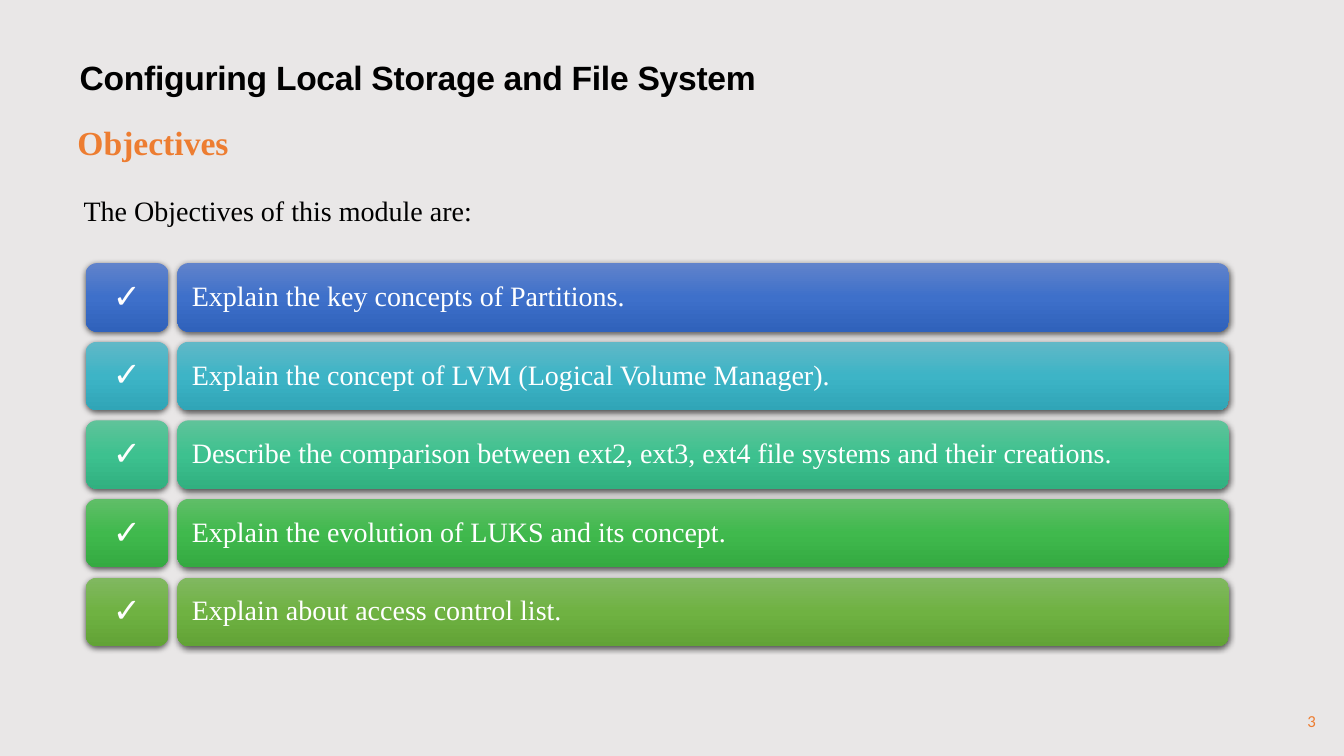
from copy import deepcopy

from lxml import etree
from pptx import Presentation
from pptx.dml.color import RGBColor
from pptx.enum.shapes import MSO_SHAPE
from pptx.enum.text import MSO_ANCHOR, MSO_AUTO_SIZE, PP_ALIGN
from pptx.oxml.ns import qn
from pptx.util import Inches, Pt

ROUNDED = MSO_SHAPE.ROUNDED_RECTANGLE
TOP, MIDDLE = MSO_ANCHOR.TOP, MSO_ANCHOR.MIDDLE
LEFT, CENTER, RIGHT = PP_ALIGN.LEFT, PP_ALIGN.CENTER, PP_ALIGN.RIGHT
SERIF, SANS, NUMBER = "Times New Roman", "Arial", "Calibri"

TITLE = "Configuring Local Storage and File System"
SUBTITLE = "Objectives"
INTRO = "The Objectives of this module are:"
PAGE = "3"
CHECK = "✓"
OBJECTIVES = [
    ("Explain the key concepts of Partitions.", "blue"),
    ("Explain the concept of LVM (Logical Volume Manager).", "teal"),
    ("Describe the comparison between ext2, ext3, ext4 file systems and their creations.", "mint"),
    ("Explain the evolution of LUKS and its concept.", "green"),
    ("Explain about access control list.", "olive"),
]
COLORS = {
    "back": "E9E7E7", "text": "000000", "accent": "ED7D31", "white": "FFFFFF", "shadow": "000000",
}
GRADIENTS = {
    "blue": ("6183CB", "3E70CA", "3062BB"),
    "teal": ("61B8C7", "3DB4C6", "30A5B7"),
    "mint": ("60C39A", "3DC18F", "31B080"),
    "green": ("60BE68", "40B94D", "34AA41"),
    "olive": ("81B861", "6FB242", "62A336"),
}
ROW_TOP, ROW_STEP, ROW_HEIGHT = 2.61, 0.78, 0.68
CHECK_COLUMN = (0.85, 0.82)
TEXT_COLUMN = (1.76, 10.43)


def rgb(value):
    return RGBColor.from_string(value)


def write(shape, text, size, font, color, bold=False, align=LEFT, anchor=TOP):
    tf = shape.text_frame
    tf.word_wrap = True
    tf.auto_size = MSO_AUTO_SIZE.NONE
    tf.vertical_anchor = anchor
    p = tf.paragraphs[0]
    p.alignment = align
    r = p.add_run()
    r.text = text
    r.font.size = Pt(size)
    r.font.name = font
    r.font.bold = bold
    r.font.color.rgb = rgb(COLORS[color])
    return r


def text_box(s, box, *args, **kwargs):
    return write(s.shapes.add_textbox(*map(Inches, box)), *args, **kwargs)


def paint(sp, gradient):
    sp.line.fill.background()
    sp.fill.gradient()
    sp.fill.gradient_angle = 270
    stops = sp._element.spPr.find(".//" + qn("a:gsLst"))
    stops.insert(1, deepcopy(stops[0]))
    for i, stop in enumerate(sp.fill.gradient_stops):
        stop.position = i / 2
        stop.color.rgb = rgb(gradient[i])
    sp.shadow.inherit = False
    effects = sp._element.spPr.find(qn("a:effectLst"))
    shadow = etree.SubElement(effects, qn("a:outerShdw"), blurRad=str(Pt(4.5)),
                              dist=str(Pt(1.5)), dir="5400000", algn="ctr", rotWithShape="0")
    color = etree.SubElement(shadow, qn("a:srgbClr"), val=COLORS["shadow"])
    etree.SubElement(color, qn("a:alpha"), val="63000")


def tile(s, column, top, gradient, inset, *args, **kwargs):
    left, width = column
    sp = s.shapes.add_shape(ROUNDED, *map(Inches, (left, top, width, ROW_HEIGHT)))
    paint(sp, gradient)
    write(sp, *args, anchor=MIDDLE, **kwargs)
    tf = sp.text_frame
    tf.margin_left = tf.margin_right = Inches(inset)
    tf.paragraphs[0].line_spacing = 0.9


def main():
    prs = Presentation()
    prs.slide_width, prs.slide_height = Inches(13.33), Inches(7.5)
    s = prs.slides.add_slide(prs.slide_layouts[5])
    s.background.fill.solid()
    s.background.fill.fore_color.rgb = rgb(COLORS["back"])

    title = s.shapes.title
    title.left, title.top, title.width, title.height = map(Inches, (0.69, 0.51, 11.2, 0.5))
    r = write(title, TITLE, 24, SANS, "text", bold=True)
    r._r.get_or_add_rPr().set("spc", "-20")

    text_box(s, (0.67, 1.16, 9.83, 0.5), SUBTITLE, 24, SERIF, "accent", bold=True)
    text_box(s, (0.73, 1.87, 12.18, 0.5), INTRO, 20, SERIF, "text")
    text_box(s, (12.68, 6.95, 0.47, 0.4), PAGE, 12, NUMBER, "accent", align=RIGHT, anchor=MIDDLE)

    for row, (objective, hue) in enumerate(OBJECTIVES):
        top = ROW_TOP + row * ROW_STEP
        tile(s, CHECK_COLUMN, top, GRADIENTS[hue], 0.13, CHECK, 24, SANS, "white",
             bold=True, align=CENTER)
        tile(s, TEXT_COLUMN, top, GRADIENTS[hue], 0.11, objective, 20, SERIF, "white")

    prs.save("out.pptx")


if __name__ == "__main__":
    main()
